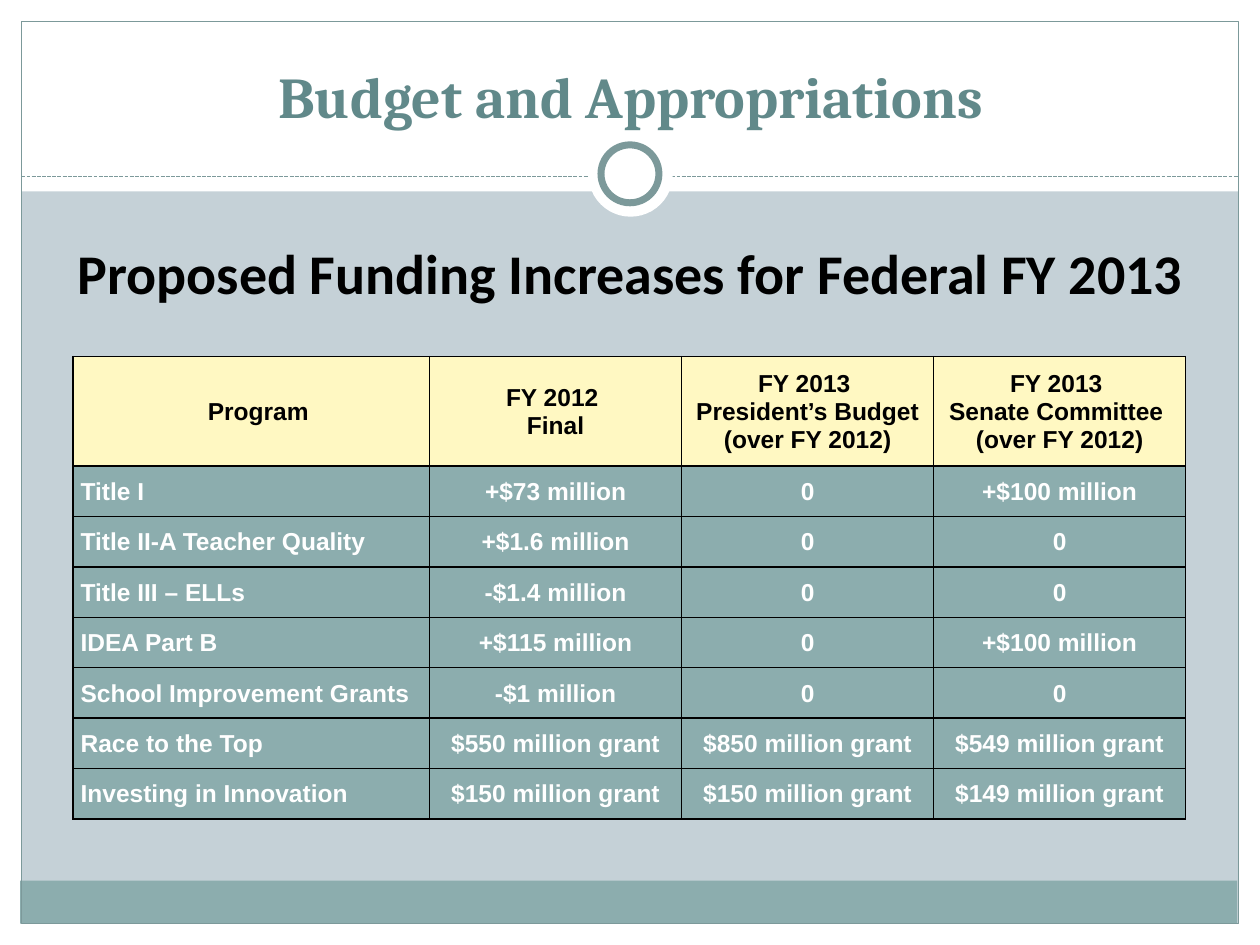
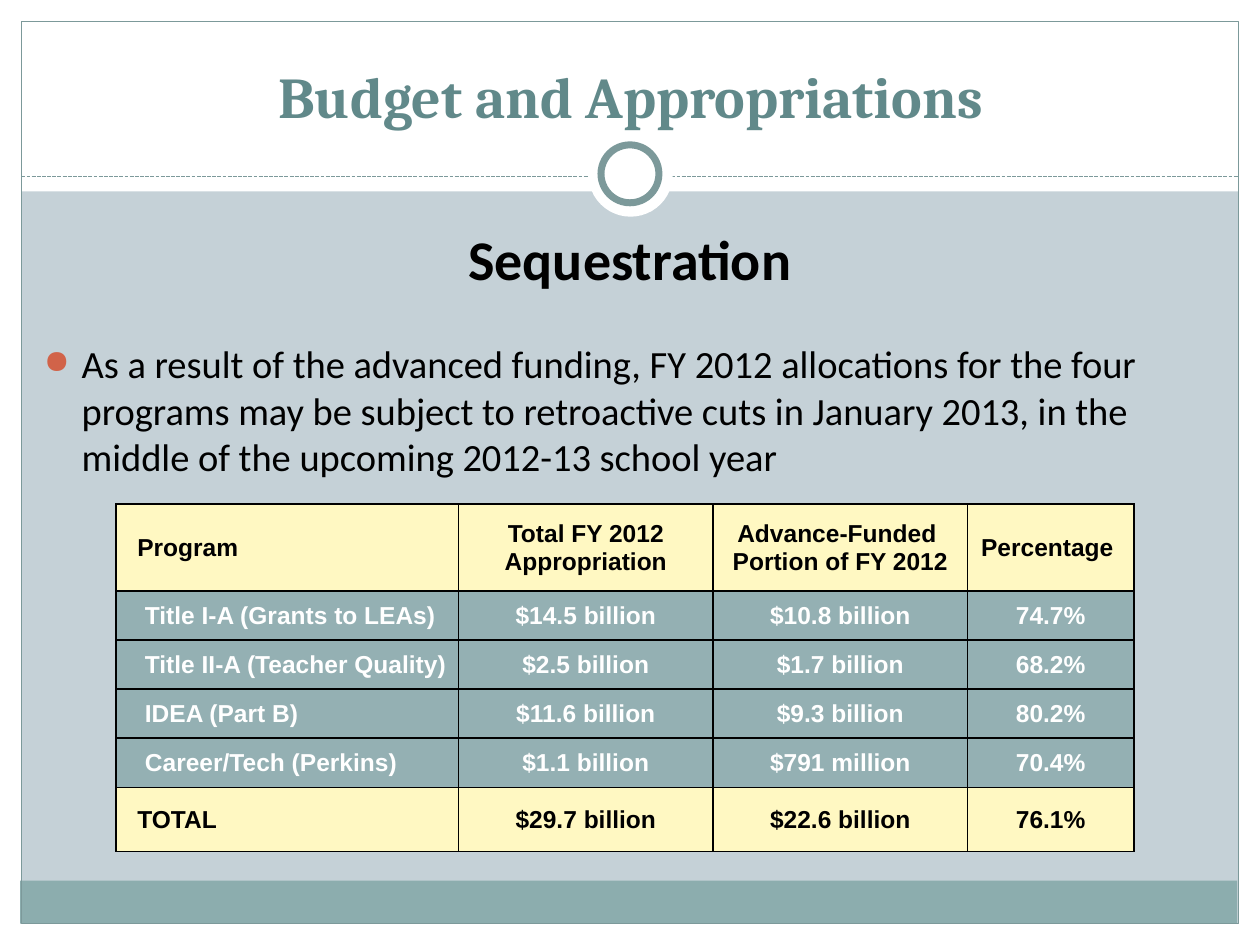
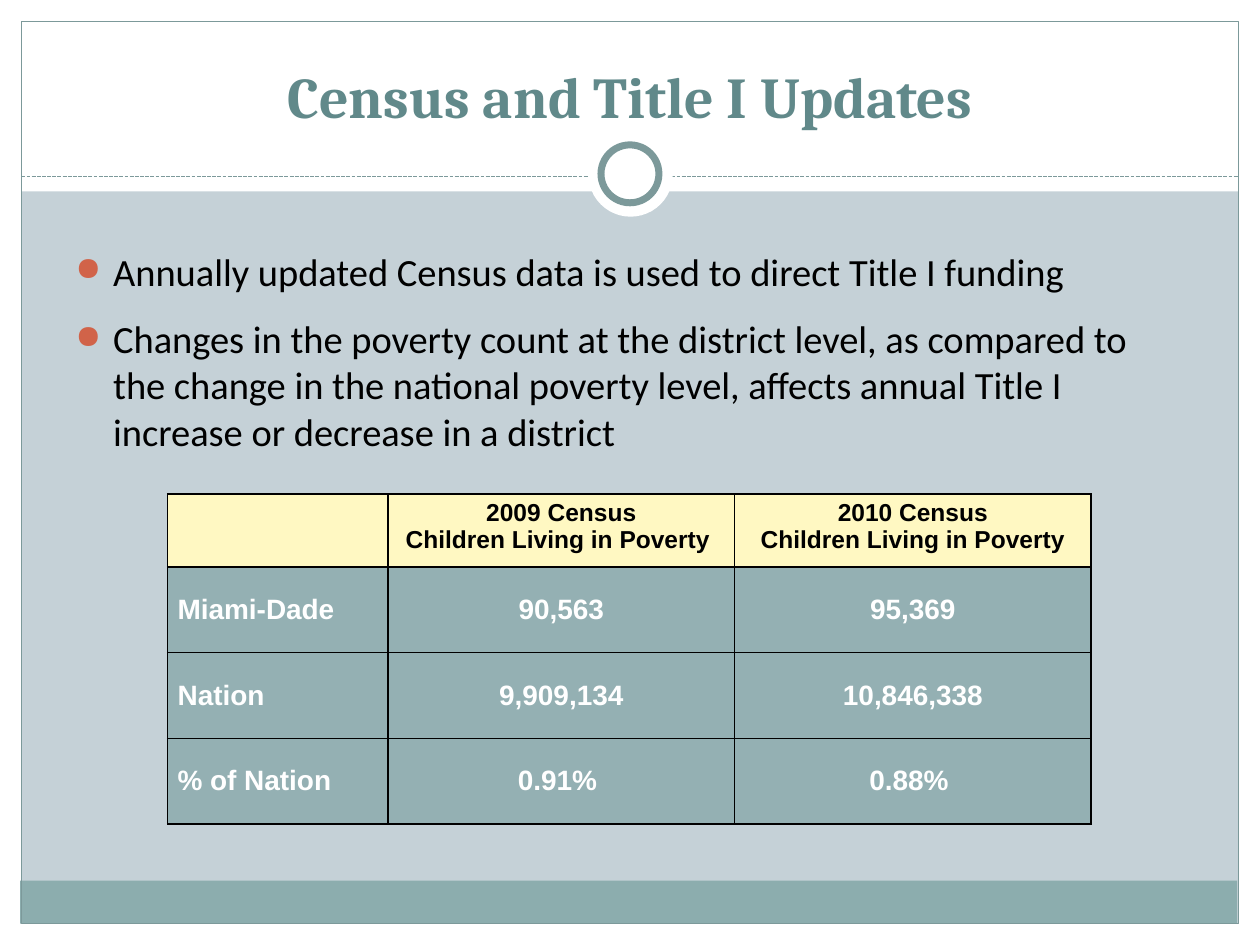
from dataclasses import dataclass
from typing import NamedTuple

from lxml import etree
from pptx import Presentation
from pptx.dml.color import RGBColor
from pptx.enum.dml import MSO_LINE
from pptx.enum.shapes import MSO_CONNECTOR, MSO_SHAPE
from pptx.enum.text import MSO_ANCHOR, MSO_AUTO_SIZE, PP_ALIGN
from pptx.oxml.ns import qn
from pptx.util import Inches, Pt

RECTANGLE, OVAL = MSO_SHAPE.RECTANGLE, MSO_SHAPE.OVAL
STRAIGHT, DASHED = MSO_CONNECTOR.STRAIGHT, MSO_LINE.SQUARE_DOT
LEFT, CENTER = PP_ALIGN.LEFT, PP_ALIGN.CENTER
TOP, MIDDLE, BOTTOM = MSO_ANCHOR.TOP, MSO_ANCHOR.MIDDLE, MSO_ANCHOR.BOTTOM
NO_AUTOFIT = MSO_AUTO_SIZE.NONE

WHITE = RGBColor(0xFF, 0xFF, 0xFF)
BLACK = RGBColor(0, 0, 0)
BACKGROUND = RGBColor(0xC5, 0xD1, 0xD7)
TEAL = RGBColor(0x8C, 0xAD, 0xAE)
PALE_TEAL = RGBColor(0x94, 0xB0, 0xB3)
FRAME_LINE = RGBColor(0x7C, 0x99, 0x9A)
TITLE_COLOR = RGBColor(0x61, 0x89, 0x8A)
CREAM = RGBColor(0xFF, 0xF8, 0xC2)
BULLET_COLOR = RGBColor(0xD1, 0x63, 0x49)

TITLE_FONT, BODY_FONT, TABLE_FONT = "Cambria", "Calibri", "Arial"
TITLE_ONLY = 5
BORDER_SIDES = ("a:lnL", "a:lnR", "a:lnT", "a:lnB")


class Box(NamedTuple):
    left: float
    top: float
    width: float
    height: float

    def lengths(self):
        return [Inches(value) for value in self]


class FrameShape(NamedTuple):
    box: Box
    kind: int = RECTANGLE
    fill: RGBColor | None = WHITE
    line_width: float = 0


class BodyText(NamedTuple):
    text: str
    is_heading: bool = False
    space_before: float = 0


class Margins(NamedTuple):
    left: float
    top: float
    right: float
    bottom: float


TIGHT = Margins(0.01, 0.01, 0.01, 0)
ROOMY = Margins(0.08, 0.04, 0.08, 0.04)


@dataclass
class TableSpec:
    left: float
    top: float
    columns: list[float]
    heights: list[float]
    rows: list[list[str]]
    body_fill: RGBColor = PALE_TEAL
    body_size: int = 14
    margins: Margins = TIGHT
    header_anchor: int = MIDDLE
    header_align: int = LEFT
    header_indent: float = 0
    body_indent: float = 0
    has_total: bool = False


@dataclass
class SlideSpec:
    title: str
    title_box: Box
    body_box: Box
    body: list[BodyText]
    table: TableSpec


FRAME_SHAPES = [
    FrameShape(Box(0, 7.33, 10, 0.17)),
    FrameShape(Box(0, 0, 10, 1.52)),
    FrameShape(Box(0, 0, 0.17, 7.5)),
    FrameShape(Box(9.83, 0, 0.17, 7.5)),
    FrameShape(Box(0.16, 6.99, 9.66, 0.34), fill=TEAL),
    FrameShape(Box(0.17, 0.17, 9.66, 7.16), fill=None, line_width=0.75),
]
RING_SHAPES = [
    FrameShape(Box(4.67, 1.05, 0.67, 0.67), OVAL),
    FrameShape(Box(4.77, 1.15, 0.46, 0.46), OVAL, line_width=4),
]

WIDE_TITLE = Box(0.17, 0.35, 9.67, 0.73)

SLIDES = [
    SlideSpec(
        "Budget and Appropriations", WIDE_TITLE, Box(0.42, 1.84, 9.17, 0.7),
        [BodyText("Proposed Funding Increases for Federal FY 2013", is_heading=True)],
        TableSpec(
            0.58, 2.83, [2.83, 2, 2, 2], [0.87] + [0.4] * 7,
            [
                ["Program", "FY 2012 \nFinal",
                 "FY 2013 \nPresident’s Budget\n(over FY 2012)",
                 "FY 2013 \nSenate Committee \n(over FY 2012)"],
                ["Title I", "+$73 million", "0", "+$100 million"],
                ["Title II-A Teacher Quality", "+$1.6 million", "0", "0"],
                ["Title III – ELLs", "-$1.4 million", "0", "0"],
                ["IDEA Part B", "+$115 million", "0", "+$100 million"],
                ["School Improvement Grants", "-$1 million", "0", "0"],
                ["Race to the Top", "$550 million grant", "$850 million grant",
                 "$549 million grant"],
                ["Investing in Innovation", "$150 million grant",
                 "$150 million grant", "$149 million grant"],
            ],
            body_fill=TEAL, header_align=CENTER, header_indent=0.11, body_indent=0.05,
        ),
    ),
    SlideSpec(
        "Budget and Appropriations", WIDE_TITLE, Box(0.25, 1.73, 9.5, 2.2),
        [
            BodyText("Sequestration", is_heading=True),
            BodyText("As a result of the advanced funding, FY 2012 allocations for the "
                     "four programs may be subject to retroactive cuts in January 2013, "
                     "in the middle of the upcoming 2012-13 school year", space_before=28),
        ],
        TableSpec(
            0.92, 4, [2.72, 2.02, 2.02, 1.32], [0.69] + [0.39] * 4 + [0.51],
            [
                ["Program", "Total FY 2012\vAppropriation",
                 "Advance-Funded \vPortion of FY 2012", "Percentage "],
                ["Title I-A (Grants to LEAs)", "$14.5 billion", "$10.8 billion", "74.7%"],
                ["Title II-A (Teacher Quality)", "$2.5 billion", "$1.7 billion", "68.2%"],
                ["IDEA (Part B)", "$11.6 billion", "$9.3 billion", "80.2%"],
                ["Career/Tech (Perkins)", "$1.1 billion", "$791 million", "70.4%"],
                ["TOTAL", "$29.7 billion", "$22.6 billion", "76.1%"],
            ],
            header_indent=0.16, body_indent=0.22, has_total=True,
        ),
    ),
    SlideSpec(
        "Census and Title I Updates", Box(0.5, 0.3, 9, 0.78), Box(0.5, 1.92, 9, 1.9),
        [
            BodyText("Annually updated Census data is used to direct Title I funding"),
            BodyText("Changes in the poverty count at the district level, as compared to "
                     "the change in the national poverty level, affects annual Title I "
                     "increase or decrease in a district", space_before=12),
        ],
        TableSpec(
            1.33, 3.92, [1.75, 2.75, 2.83], [0.58] + [0.68] * 3,
            [
                ["", "2009 Census\nChildren Living in Poverty ",
                 "2010 Census\nChildren Living in Poverty"],
                ["Miami-Dade", "90,563", "95,369"],
                ["Nation", "9,909,134", "10,846,338"],
                ["% of Nation", "0.91% ", "0.88% "],
            ],
            body_size=16, margins=ROOMY, header_anchor=TOP,
        ),
    ),
]


def set_font(para, name: str, size: float, color: RGBColor, bold: bool) -> None:
    font = para.font
    font.name, font.size, font.bold = name, Pt(size), bold
    font.color.rgb = color


# Shared frame
def add_frame_shape(slide, spec: FrameShape):
    shape = slide.shapes.add_shape(spec.kind, *spec.box.lengths())
    shape.shadow.inherit = False
    if spec.fill is None:
        shape.fill.background()
    else:
        shape.fill.solid()
        shape.fill.fore_color.rgb = spec.fill
    if spec.line_width:
        shape.line.color.rgb = FRAME_LINE
        shape.line.width = Pt(spec.line_width)
    else:
        shape.line.fill.background()
    return shape


def add_divider(slide):
    divider = slide.shapes.add_connector(
        STRAIGHT, Inches(0.17), Inches(1.4), Inches(9.83), Inches(1.4))
    divider.line.color.rgb = FRAME_LINE
    divider.line.width = Pt(0.75)
    divider.line.dash_style = DASHED
    etree.SubElement(divider.element.spPr, qn("a:effectLst"))
    return divider


def move_frame_to_layout(slide, layout) -> None:
    """Draw the frame once, then let the layout show it on every slide."""
    layout.background.fill.solid()
    layout.background.fill.fore_color.rgb = BACKGROUND
    frame = [add_frame_shape(slide, spec) for spec in FRAME_SHAPES]
    frame.append(add_divider(slide))
    frame += [add_frame_shape(slide, spec) for spec in RING_SHAPES]
    for shape in frame:
        layout.shapes.element.append(shape.element)


# Title and body text
def format_title(slide, text: str, box: Box) -> None:
    title = slide.shapes.title
    title.left, title.top, title.width, title.height = box.lengths()
    frame = title.text_frame
    frame.text = text
    frame.auto_size = NO_AUTOFIT
    frame.vertical_anchor = BOTTOM
    para = frame.paragraphs[0]
    para.alignment = CENTER
    set_font(para, TITLE_FONT, 33, TITLE_COLOR, True)


def add_bullet(para) -> None:
    properties = para._p.get_or_add_pPr()
    properties.set("marL", str(Inches(0.3)))
    properties.set("indent", str(Inches(-0.3)))
    color = etree.SubElement(properties, qn("a:buClr"))
    etree.SubElement(color, qn("a:srgbClr"), val=str(BULLET_COLOR))
    etree.SubElement(properties, qn("a:buSzPct"), val="85000")
    etree.SubElement(properties, qn("a:buChar"), char="●")


def add_body(slide, box: Box, texts: list[BodyText]) -> None:
    frame = slide.shapes.add_textbox(*box.lengths()).text_frame
    frame.word_wrap = True
    for index, item in enumerate(texts):
        para = frame.add_paragraph() if index else frame.paragraphs[0]
        para.text = item.text
        para.space_before = Pt(item.space_before)
        if item.is_heading:
            para.alignment = CENTER
        else:
            add_bullet(para)
        set_font(para, BODY_FONT, 32 if item.is_heading else 22, BLACK, item.is_heading)


# Tables
def add_borders(cell) -> None:
    properties = cell._tc.get_or_add_tcPr()
    for side in BORDER_SIDES:
        line = etree.SubElement(properties, qn(side), w=str(Pt(1)))
        fill = etree.SubElement(line, qn("a:solidFill"))
        etree.SubElement(fill, qn("a:srgbClr"), val=str(BLACK))


def format_cell(cell, text: str, spec: TableSpec, row: int, column: int) -> None:
    is_header = row == 0
    is_cream = is_header or (spec.has_total and row == len(spec.rows) - 1)
    indent = spec.header_indent if is_cream else spec.body_indent
    margins = spec.margins
    add_borders(cell)
    cell.fill.solid()
    cell.fill.fore_color.rgb = CREAM if is_cream else spec.body_fill
    cell.margin_left = Inches(margins.left + (0 if column else indent))
    cell.margin_top = Inches(margins.top)
    cell.margin_right = Inches(margins.right)
    cell.margin_bottom = Inches(margins.bottom)
    cell.vertical_anchor = spec.header_anchor if is_header else MIDDLE
    cell.text_frame.text = text
    first_align = spec.header_align if is_header else LEFT
    for para in cell.text_frame.paragraphs:
        para.alignment = CENTER if column else first_align
        set_font(para, TABLE_FONT, 14 if is_header else spec.body_size,
                 BLACK if is_cream else WHITE, True)


def add_data_table(slide, spec: TableSpec) -> None:
    box = Box(spec.left, spec.top, sum(spec.columns), sum(spec.heights))
    table = slide.shapes.add_table(
        len(spec.heights), len(spec.columns), *box.lengths()).table
    table.first_row = table.horz_banding = False
    for column, width in zip(table.columns, spec.columns):
        column.width = Inches(width)
    for row, height in zip(table.rows, spec.heights):
        row.height = Inches(height)
    for row, texts in enumerate(spec.rows):
        for column, text in enumerate(texts):
            format_cell(table.cell(row, column), text, spec, row, column)


def main() -> None:
    deck = Presentation()
    deck.slide_width, deck.slide_height = Inches(10), Inches(7.5)
    layout = deck.slide_layouts[TITLE_ONLY]
    for index, spec in enumerate(SLIDES):
        slide = deck.slides.add_slide(layout)
        if index == 0:
            move_frame_to_layout(slide, layout)
        format_title(slide, spec.title, spec.title_box)
        add_body(slide, spec.body_box, spec.body)
        add_data_table(slide, spec.table)
    deck.save("out.pptx")


if __name__ == "__main__":
    main()
